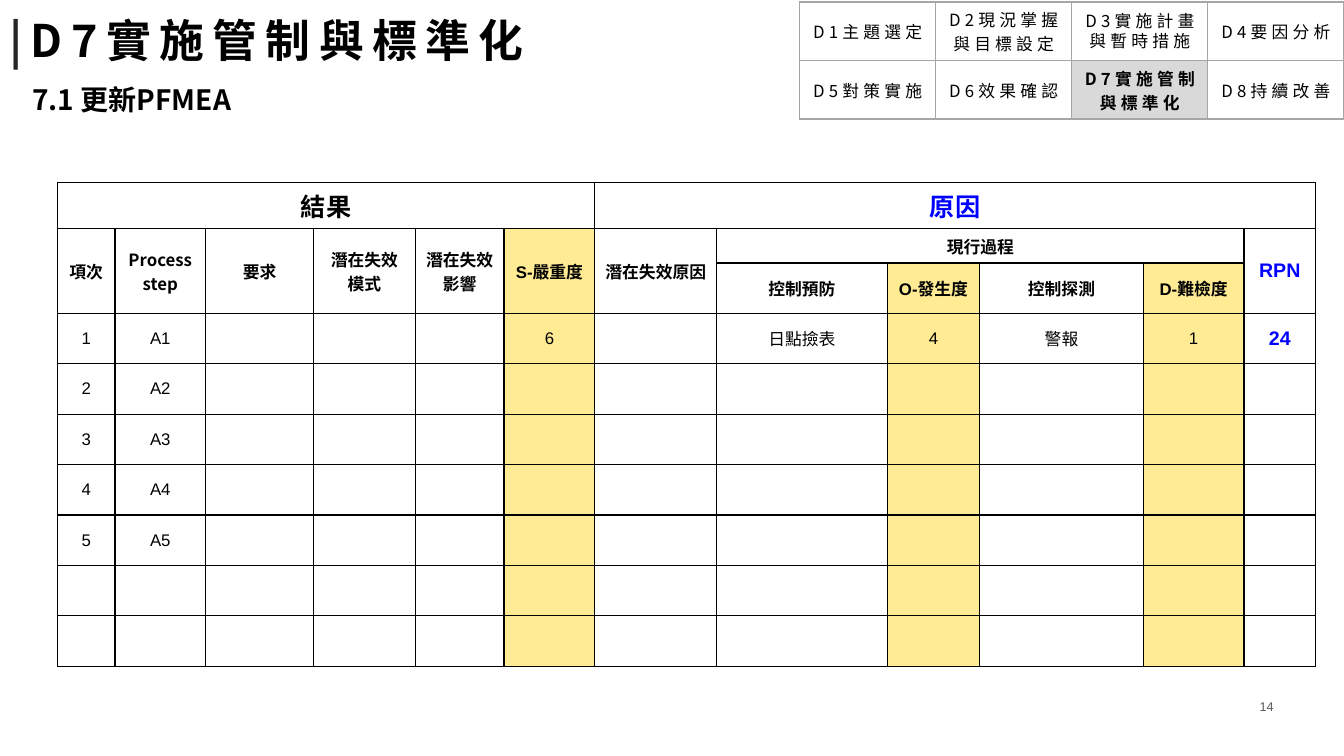
import pptx
import pptx.util
import pptx.dml.color
import pptx.enum.text
import pptx.oxml.ns
from lxml import etree

RGB = pptx.dml.color.RGBColor
BLACK = RGB(0, 0, 0)
BLUE = RGB(0, 0, 255)
WHITE = RGB(255, 255, 255)
DARK = RGB(0x26, 0x26, 0x26)
SLATE = RGB(0x59, 0x59, 0x59)
GREY = RGB(0xA6, 0xA6, 0xA6)
SILVER = RGB(0xD9, 0xD9, 0xD9)
YELLOW = RGB(0xFF, 0xEB, 0x94)
NOTO = "Noto Sans CJK SC"
ARIAL = "Arial"
PX = 9144
ALIGN = pptx.enum.text.PP_ALIGN
MIDDLE = pptx.enum.text.MSO_ANCHOR.MIDDLE
qn = pptx.oxml.ns.qn


def style(run, size, face, color, bold=False, gap=0):
    font = run.font
    font.size = pptx.util.Pt(size)
    font.name = face
    font.bold = bold
    font.color.rgb = color
    props = font._element
    if gap:
        props.set("spc", str(gap * 100))
    props.find(qn("a:latin")).addnext(etree.Element(qn("a:ea"), typeface=NOTO))


def make_table(left, top, cols, rows, color, side):
    frame = slide.shapes.add_table(len(rows), len(cols), left * PX, top * PX,
                                   sum(cols) * PX, sum(rows) * PX)
    table = frame.table
    table.first_row = False
    table.horz_banding = False
    for col, wide in zip(table.columns, cols):
        col.width = wide * PX
    for row, high in zip(table.rows, rows):
        row.height = high * PX
    for cell in table.iter_cells():
        cell.vertical_anchor = MIDDLE
        cell.margin_left = cell.margin_right = side * PX
        props = cell._tc.get_or_add_tcPr()
        for edge in ("lnL", "lnR", "lnT", "lnB"):
            line = etree.SubElement(props, qn("a:" + edge), w="12700")
            fill = etree.SubElement(line, qn("a:solidFill"))
            etree.SubElement(fill, qn("a:srgbClr"), val=str(color))
        cell.fill.background()
    return table


deck = pptx.Presentation()
deck.slide_width = 1333 * PX
deck.slide_height = 750 * PX
slide = deck.slides.add_slide(deck.slide_layouts[6])

title = slide.shapes.add_textbox(2 * PX, 2 * PX, 791 * PX, 75 * PX).text_frame
title.word_wrap = True
title.vertical_anchor = MIDDLE
title.margin_left = title.margin_right = 7 * PX
title.margin_top = title.margin_bottom = 4 * PX
for text, color in (("|", DARK), ("D7實施管制與標準化", BLACK)):
    run = title.paragraphs[0].add_run()
    run.text = text
    style(run, 32, NOTO, color, True, 6)

for box, text, size, face, color, bold, align in (
    ((22, 77, 427, 44), "7.1 更新PFMEA", 20, NOTO, BLACK, True, ALIGN.LEFT),
    ((1202, 685, 71, 31), "14", 9, ARIAL, SLATE, False, ALIGN.RIGHT),
):
    frame = slide.shapes.add_textbox(*[n * PX for n in box]).text_frame
    frame.word_wrap = True
    frame.vertical_anchor = MIDDLE
    frame.text = text
    para = frame.paragraphs[0]
    para.alignment = align
    style(para.runs[0], size, face, color, bold)

steps = ["D1主題選定", "D2現況掌握\n與目標設定", "D3實施計畫\n與暫時措施", "D4要因分析",
         "D5對策實施", "D6效果確認", "D7實施管制\n與標準化", "D8持續改善"]
nav = make_table(793, 2, [135] * 4, [58] * 2, GREY, 5)
for i, text in enumerate(steps):
    cell = nav.cell(i // 4, i % 4)
    now = text.startswith("D7")
    cell.text_frame.text = text
    if i > 2:
        cell.fill.solid()
        cell.fill.fore_color.rgb = SILVER if now else WHITE
    for para in cell.text_frame.paragraphs:
        para.alignment = ALIGN.CENTER
        if i == 2:
            para.line_spacing = 0.85
        style(para.runs[0], 12, NOTO, BLACK, now, 3)

cols = [57, 90, 107, 101, 88, 90, 121, 169, 92, 162, 100, 71]
fmea = make_table(57, 181, cols, [46, 34, 34] + [50] * 7, BLACK, 10)
for top, left, end, last in [(0, 0, 0, 5), (0, 6, 0, 11), (1, 7, 1, 10)] + [
        (1, c, 2, c) for c in (0, 1, 2, 3, 4, 5, 6, 11)]:
    fmea.cell(top, left).merge(fmea.cell(end, last))

heads = ["項次", "Process step", "要求", "潛在失效模式", "潛在失效影響",
         "S-嚴重度", "潛在失效原因", "現行過程"]
words = {(0, 0): "結果", (0, 6): "原因", (1, 11): "RPN",
         (2, 7): "控制預防", (2, 8): "O-發生度", (2, 9): "控制探測", (2, 10): "D-難檢度",
         (3, 5): "6", (3, 7): "日點撿表", (3, 8): "4", (3, 9): "警報",
         (3, 10): "1", (3, 11): "24"}
for c, text in enumerate(heads):
    words[1, c] = text
for n in range(1, 6):
    words[n + 2, 0] = str(n)
    words[n + 2, 1] = f"A{n}"

for (r, c), text in words.items():
    frame = fmea.cell(r, c).text_frame
    frame.text = text
    para = frame.paragraphs[0]
    para.alignment = ALIGN.CENTER
    size = 18 if r == 0 else 14 if c == 11 else 12
    face = NOTO if (r, c) in ((0, 0), (1, 0), (1, 1)) else ARIAL
    color = BLUE if c == 11 or (r, c) == (0, 6) else BLACK
    style(para.runs[0], size, face, color, r < 3 or c == 11)

for c, first in ((5, 1), (8, 2), (10, 2)):
    for r in range(first, 10):
        fill = fmea.cell(r, c).fill
        fill.solid()
        fill.fore_color.rgb = YELLOW

deck.save("out.pptx")
